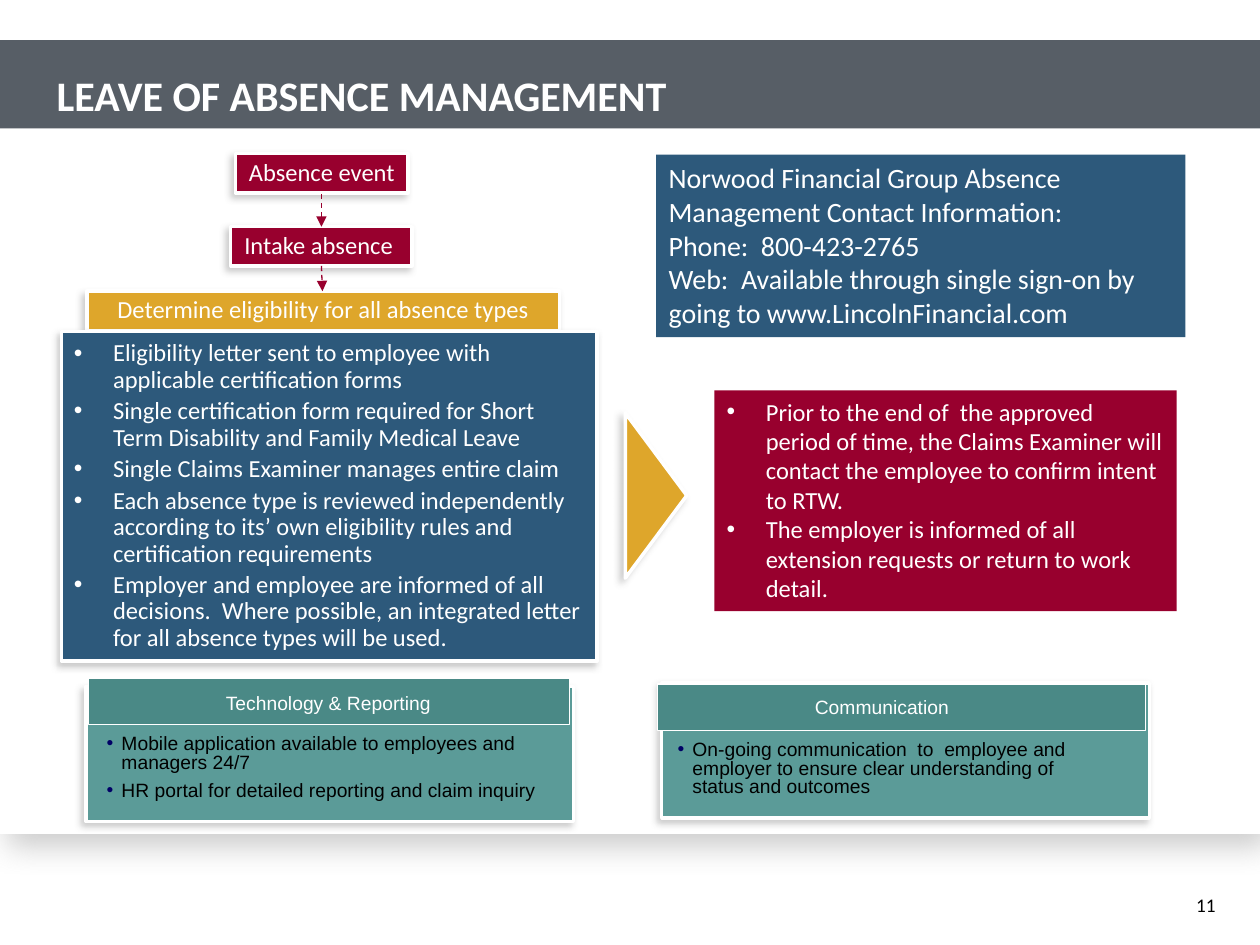
from dataclasses import dataclass
from typing import NamedTuple, Optional

from lxml import etree
from pptx import Presentation
from pptx import util as u
from pptx.dml.color import RGBColor
from pptx.enum import dml, shapes, text
from pptx.oxml import ns


@dataclass(frozen=True)
class Theme:
    white: str = "FFFFFF"
    black: str = "000000"
    slate: str = "575E66"
    red: str = "98002E"
    gold: str = "DEA62B"
    blue: str = "2D597B"
    teal: str = "5B9B98"
    dark_teal: str = "4A8986"
    navy: str = "000066"
    shade: str = "808080"
    body_font: str = "Calibri"
    panel_font: str = "Arial"
    title_size: int = 24
    contact_size: int = 16
    body_size: int = 14
    small_size: int = 11


THEME = Theme()


class Frame(NamedTuple):
    """Left, top, width and height in centimetres."""
    left: float
    top: float
    width: float
    height: float

    def lengths(self) -> list[u.Cm]:
        return [u.Cm(value) for value in self]


class Shadow(NamedTuple):
    blur: float
    distance: float
    angle: int
    opacity: int = 40


SOFT = Shadow(4, 3, 135)
PAGE_SHADOW = Shadow(17.5, 9, 60)


@dataclass(frozen=True)
class Style:
    size: int = THEME.body_size
    font: str = THEME.body_font
    color: str = THEME.white
    bold: bool = False
    align: text.PP_ALIGN = text.PP_ALIGN.LEFT
    anchor: text.MSO_ANCHOR = text.MSO_ANCHOR.TOP
    spacing: Optional[float | u.Pt] = None
    before: float = 0
    indent: float = 0
    bullet_color: Optional[str] = None
    wrap: bool = True


CENTER, MIDDLE = text.PP_ALIGN.CENTER, text.MSO_ANCHOR.MIDDLE
TITLE = Style(THEME.title_size, bold=True, anchor=text.MSO_ANCHOR.BOTTOM,
              spacing=u.Pt(THEME.title_size))
STEP = Style(align=CENTER, anchor=MIDDLE, spacing=0.9)
SHORT_STEP = Style(align=CENTER, anchor=MIDDLE, spacing=0.9, wrap=False)
DETAILS = Style(anchor=MIDDLE, spacing=0.9, before=2.8, indent=0.79)
FOLLOW_UP = Style(indent=0.79)
CONTACT = Style(THEME.contact_size)
PANEL_HEADING = Style(THEME.small_size, THEME.panel_font, align=CENTER)
PANEL_BODY = Style(THEME.small_size, THEME.panel_font, THEME.black, spacing=0.8,
                   before=5.5, indent=0.3, bullet_color=THEME.navy)
PAGE_NUMBER = Style(THEME.small_size, color=THEME.black, align=text.PP_ALIGN.RIGHT,
                    anchor=text.MSO_ANCHOR.BOTTOM)


class Panel(NamedTuple):
    back: Frame
    header: Frame
    heading: Frame
    body: Frame
    title: str
    points: list[str]


PANELS = [
    Panel(Frame(1.73, 13.84, 9.83, 2.72), Frame(1.78, 13.67, 9.7, 0.94),
          Frame(1.68, 13.82, 9.88, 0.71), Frame(1.9, 14.71, 9.22, 2.01),
          "Technology & Reporting",
          ["Mobile application available to employees and managers 24/7",
           "HR portal for detailed reporting and claim inquiry"]),
    Panel(Frame(13.34, 13.77, 9.83, 2.72), Frame(13.26, 13.79, 9.83, 0.94),
          Frame(12.88, 13.89, 9.8, 0.71), Frame(13.41, 14.83, 9.22, 1.75),
          "Communication",
          ["On-going communication  to  employee and employer to ensure clear "
           "understanding of status and outcomes"]),
]


def add_child(parent, tag: str, **attributes):
    return etree.SubElement(parent, ns.qn(tag), {k: str(v) for k, v in attributes.items()})


def add_bullet(para, style: Style) -> None:
    properties = para._p.get_or_add_pPr()
    indent = u.Cm(style.indent)
    properties.set("marL", str(int(indent)))
    properties.set("indent", str(-int(indent)))
    if style.bullet_color:
        add_child(add_child(properties, "a:buClr"), "a:srgbClr", val=style.bullet_color)
    add_child(properties, "a:buFont", typeface="Arial")
    add_child(properties, "a:buChar", char="•")


def write(shape, lines: list[str], style: Style) -> None:
    frame = shape.text_frame
    frame.word_wrap = style.wrap
    frame.auto_size = text.MSO_AUTO_SIZE.NONE
    frame.vertical_anchor = style.anchor
    for index, line in enumerate(lines):
        para = frame.add_paragraph() if index else frame.paragraphs[0]
        para.text = line
        if style.indent:
            add_bullet(para, style)
        para.alignment = style.align
        if style.spacing:
            para.line_spacing = style.spacing
        para.space_before = u.Pt(style.before if index else 0)
        para.font.size = u.Pt(style.size)
        para.font.name = style.font
        para.font.bold = style.bold
        para.font.color.rgb = RGBColor.from_string(style.color)


def add_block(page, frame: Frame, fill: str, border: float = 0,
              shadow: Optional[Shadow] = None, kind=shapes.MSO_SHAPE.RECTANGLE):
    block = page.shapes.add_shape(kind, *frame.lengths())
    block.fill.solid()
    block.fill.fore_color.rgb = RGBColor.from_string(fill)
    if border:
        block.line.color.rgb = RGBColor.from_string(THEME.white)
        block.line.width = u.Pt(border)
    else:
        block.line.fill.background()
    block.shadow.inherit = False
    if shadow:
        effects = block._element.spPr.find(ns.qn("a:effectLst"))
        outer = add_child(effects, "a:outerShdw", blurRad=int(u.Pt(shadow.blur)),
                          dist=int(u.Pt(shadow.distance)), dir=shadow.angle * 60000,
                          algn="ctr", rotWithShape=0)
        color = add_child(outer, "a:srgbClr", val=THEME.shade)
        add_child(color, "a:alpha", val=shadow.opacity * 1000)
    return block


def add_label(page, frame: Frame, lines: list[str], style: Style):
    label = page.shapes.add_textbox(*frame.lengths())
    write(label, lines, style)
    return label


def add_arrow(page, *ends: float) -> None:
    """Draw a dashed arrow between x1, y1 and x2, y2 in centimetres."""
    arrow = page.shapes.add_connector(shapes.MSO_CONNECTOR.STRAIGHT, *map(u.Cm, ends))
    arrow.line.color.rgb = RGBColor.from_string(THEME.red)
    arrow.line.width = u.Pt(0.75)
    arrow.line.dash_style = dml.MSO_LINE.DASH
    add_child(arrow.line._get_or_add_ln(), "a:tailEnd", type="triangle")
    add_child(arrow._element.spPr, "a:effectLst")


def add_panel(page, panel: Panel) -> None:
    add_block(page, panel.back, THEME.teal, 2, SOFT)
    add_block(page, panel.header, THEME.dark_teal, 0.75)
    add_label(page, panel.body, panel.points, PANEL_BODY)
    add_label(page, panel.heading, [panel.title], PANEL_HEADING)


def add_frame_and_title(page) -> None:
    add_block(page, Frame(0, 2.59, 25.4, 14.22), THEME.white, shadow=PAGE_SHADOW)
    add_block(page, Frame(0, 0.81, 25.4, 1.78), THEME.slate)
    title = page.shapes.title
    title.left, title.top, title.width, title.height = Frame(0.89, 1.27, 23.62, 1.27).lengths()
    write(title, ["LEAVE OF ABSENCE MANAGEMENT"], TITLE)
    page.shapes._spTree.append(title._element)  # bring the title above its band
    number = add_label(page, Frame(23.24, 17.96, 1.27, 0.51), ["11"], PAGE_NUMBER)
    number.text_frame.margin_top = number.text_frame.margin_bottom = 0
    number.text_frame.margin_right = 0


def add_flow(page) -> None:
    steps = [
        (Frame(4.75, 3.1, 3.48, 0.79), THEME.red, ["Absence event"], SHORT_STEP),
        (Frame(4.65, 4.57, 3.66, 0.79), THEME.red, ["Intake absence "], SHORT_STEP),
        (Frame(1.75, 5.87, 9.53, 0.79), THEME.gold,
         ["Determine eligibility for all absence types"], STEP),
        (Frame(1.24, 6.68, 10.8, 6.65), THEME.blue, [
            "Eligibility letter sent to employee with applicable certification forms",
            "Single certification form required for Short Term Disability and Family Medical Leave",
            "Single Claims Examiner manages entire claim",
            "Each absence type is reviewed independently according to its’ own eligibility "
            "rules and certification requirements",
            "Employer and employee are informed of all decisions.  Where possible, an "
            "integrated letter for all absence types will be used."], DETAILS),
    ]
    for frame, fill, lines, style in steps:
        write(add_block(page, frame, fill, 2, SOFT), lines, style)
    add_arrow(page, 6.48, 3.91, 6.48, 4.57)
    add_arrow(page, 6.48, 5.36, 6.5, 5.87)
    pointer = add_block(page, Frame(11.56, 9.37, 3.33, 1.24), THEME.gold, 2, SOFT,
                        shapes.MSO_SHAPE.ISOSCELES_TRIANGLE)
    pointer.rotation = 90


def add_side_notes(page) -> None:
    write(add_block(page, Frame(14.4, 7.87, 9.32, 4.45), THEME.red), [
        "Prior to the end of  the approved period of time, the Claims Examiner will "
        "contact the employee to confirm intent to RTW.",
        "The employer is informed of all extension requests or return to work detail."], FOLLOW_UP)
    write(add_block(page, Frame(13.23, 3.12, 10.67, 3.68), THEME.blue), [
        "Norwood Financial Group Absence Management Contact Information:",
        "Phone:  800-423-2765",
        "Web:  Available through single sign-on by going to www.LincolnFinancial.com"], CONTACT)


def main() -> None:
    deck = Presentation()
    deck.slide_width, deck.slide_height = u.Cm(25.4), u.Cm(19.05)
    page = deck.slides.add_slide(deck.slide_layouts.get_by_name("Title Only"))
    add_frame_and_title(page)
    add_flow(page)
    for panel in PANELS:
        add_panel(page, panel)
    add_side_notes(page)
    deck.save("out.pptx")


if __name__ == "__main__":
    main()
